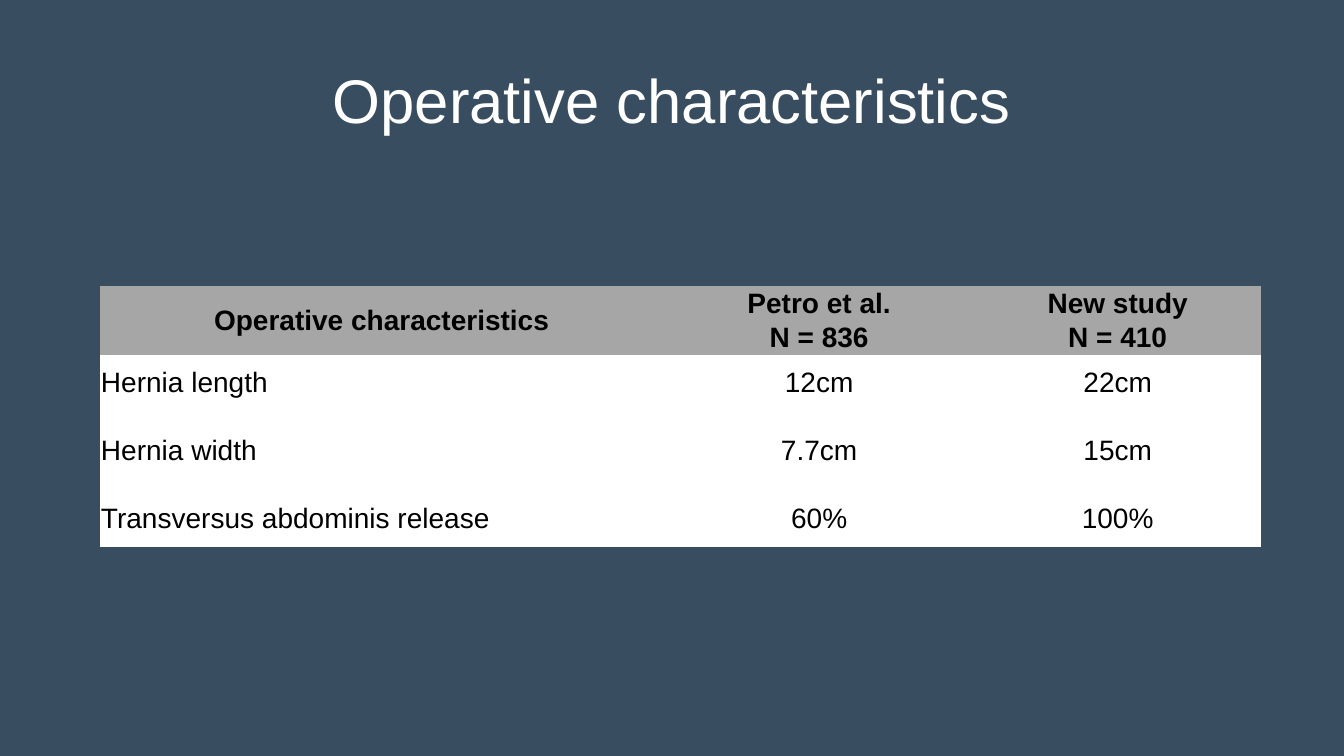
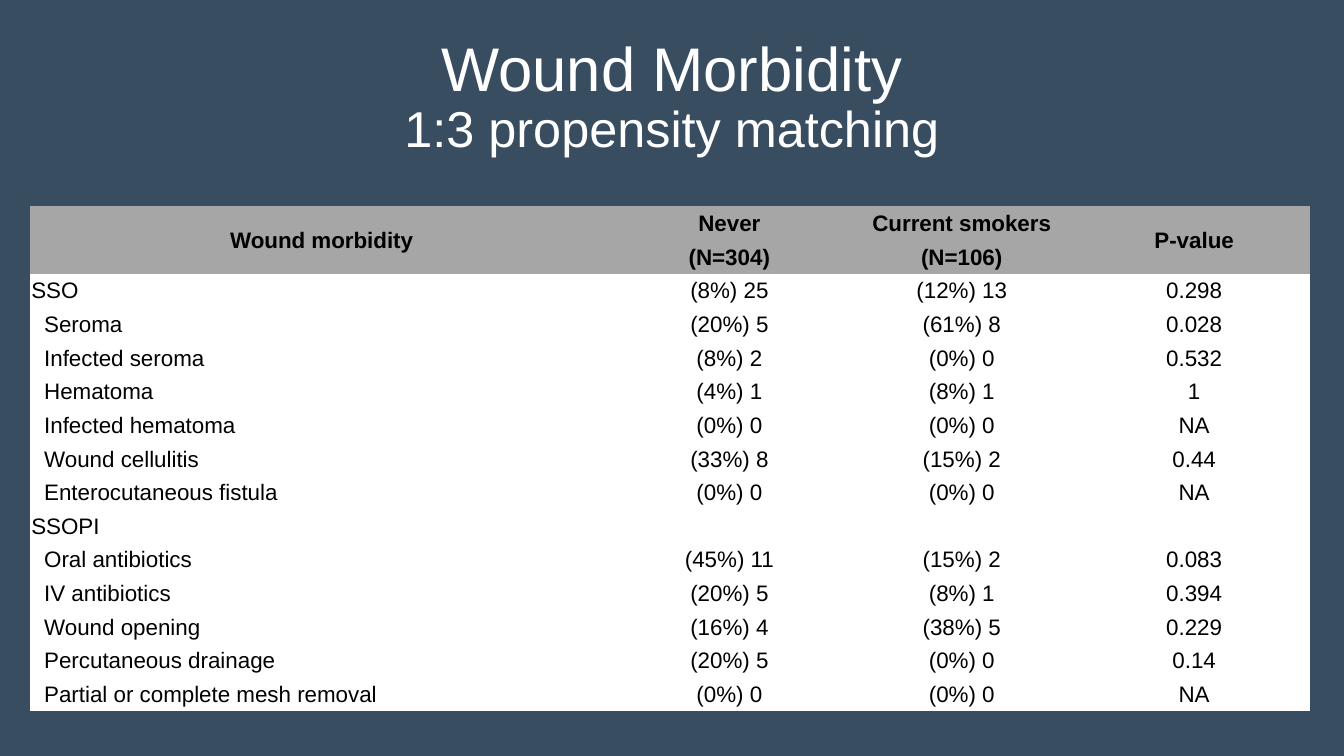
from pptx import Presentation
from pptx.dml.color import RGBColor
from pptx.enum import text
from pptx.util import Pt

NAVY = RGBColor(0x38, 0x4D, 0x60)
GREY = RGBColor(0xA6, 0xA6, 0xA6)
WHITE = RGBColor(0xFF, 0xFF, 0xFF)
BLACK = RGBColor(0, 0, 0)
PLAIN_TABLE = "{2D5ABB26-0587-4C30-8999-92F81FD0307C}"
CENTER = text.PP_ALIGN.CENTER
LEFT = text.PP_ALIGN.LEFT


class Deck:
    font = "Arial"
    inset = 0.75
    indent = 10
    header_rows = 2

    def __init__(self, width, height):
        self.presentation = Presentation()
        self.presentation.slide_width = Pt(width)
        self.presentation.slide_height = Pt(height)
        self.width = width
        self.slide = None

    def add_slide(self):
        layout = self.presentation.slide_layouts[6]
        self.slide = self.presentation.slides.add_slide(layout)
        fill = self.slide.background.fill
        fill.solid()
        fill.fore_color.rgb = NAVY

    def add_run(self, paragraph, words, size, color, bold=False):
        run = paragraph.add_run()
        run.text = words
        run.font.name = self.font
        run.font.size = Pt(size)
        run.font.bold = bold
        run.font.color.rgb = color

    def add_title(self, top, *lines):
        shape = self.slide.shapes.add_textbox(0, Pt(top), Pt(self.width), Pt(104.4))
        frame = shape.text_frame
        frame.word_wrap = True
        frame.vertical_anchor = text.MSO_ANCHOR.MIDDLE
        for index, (words, size) in enumerate(lines):
            paragraph = frame.add_paragraph() if index else frame.paragraphs[0]
            paragraph.alignment = CENTER
            paragraph.line_spacing = 0.9
            self.add_run(paragraph, words, size, WHITE)

    def fill_cell(self, cell, words, size, header, align, left_inset):
        cell.fill.solid()
        cell.fill.fore_color.rgb = GREY if header else WHITE
        cell.vertical_anchor = text.MSO_ANCHOR.MIDDLE
        cell.margin_left = Pt(left_inset)
        cell.margin_right = cell.margin_top = Pt(self.inset)
        cell.margin_bottom = 0
        if words:
            paragraph = cell.text_frame.paragraphs[0]
            paragraph.alignment = align
            self.add_run(paragraph, words, size, BLACK, header)

    def add_table(self, left, top, widths, heights, size, rows, sections=None):
        table = self.slide.shapes.add_table(
            len(rows), len(widths), Pt(left), Pt(top), Pt(sum(widths)), Pt(sum(heights))
        ).table
        table.first_row = table.horz_banding = False
        table._tbl.tblPr[0].text = PLAIN_TABLE
        for column, width in zip(table.columns, widths):
            column.width = Pt(width)
        for row, height in zip(table.rows, heights):
            row.height = Pt(height)
        for i, row in enumerate(rows):
            header = i < self.header_rows
            for j, words in enumerate(row):
                label = j == 0 and not header
                nested = label and sections and words not in sections
                left_inset = self.indent if nested else self.inset
                align = LEFT if label else CENTER
                self.fill_cell(table.cell(i, j), words, size, header, align, left_inset)
                if words is None:
                    table.cell(i - 1, j).merge(table.cell(i, j))

    def save(self):
        self.presentation.save("out.pptx")


OPERATIVE_ROWS = [
    ("Operative characteristics", "Petro et al.", "New study"),
    (None, "N = 836", "N = 410"),
    ("Hernia length", "12cm", "22cm"),
    ("Hernia width", "7.7cm", "15cm"),
    ("Transversus abdominis release", "60%", "100%"),
]

WOUND_ROWS = [
    ("Wound morbidity", "Never", "Current smokers", "P-value"),
    (None, "(N=304)", "(N=106)", None),
    ("SSO", "(8%) 25", "(12%) 13", "0.298"),
    ("Seroma", "(20%) 5", "(61%) 8", "0.028"),
    ("Infected seroma", "(8%) 2", "(0%) 0", "0.532"),
    ("Hematoma", "(4%) 1", "(8%) 1", "1"),
    ("Infected hematoma", "(0%) 0", "(0%) 0", "NA"),
    ("Wound cellulitis", "(33%) 8", "(15%) 2", "0.44"),
    ("Enterocutaneous fistula", "(0%) 0", "(0%) 0", "NA"),
    ("SSOPI", "", "", ""),
    ("Oral antibiotics", "(45%) 11", "(15%) 2", "0.083"),
    ("IV antibiotics", "(20%) 5", "(8%) 1", "0.394"),
    ("Wound opening", "(16%) 4", "(38%) 5", "0.229"),
    ("Percutaneous drainage", "(20%) 5", "(0%) 0", "0.14"),
    ("Partial or complete mesh removal", "(0%) 0", "(0%) 0", "NA"),
]


def main():
    deck = Deck(960, 540)

    deck.add_slide()
    deck.add_title(21.6, ("Operative characteristics", 44))
    deck.add_table(71.4, 204, [402.5, 222.5, 204], [24, 24, 39, 57.5, 40.5],
                   20, OPERATIVE_ROWS)

    deck.add_slide()
    deck.add_title(18, ("Wound Morbidity", 44), ("1:3 propensity matching", 36))
    deck.add_table(21.6, 147.4, [416.4] + [166] * 3, [24.05] * len(WOUND_ROWS),
                   16, WOUND_ROWS, sections=("SSO", "SSOPI"))

    deck.save()


if __name__ == "__main__":
    main()
